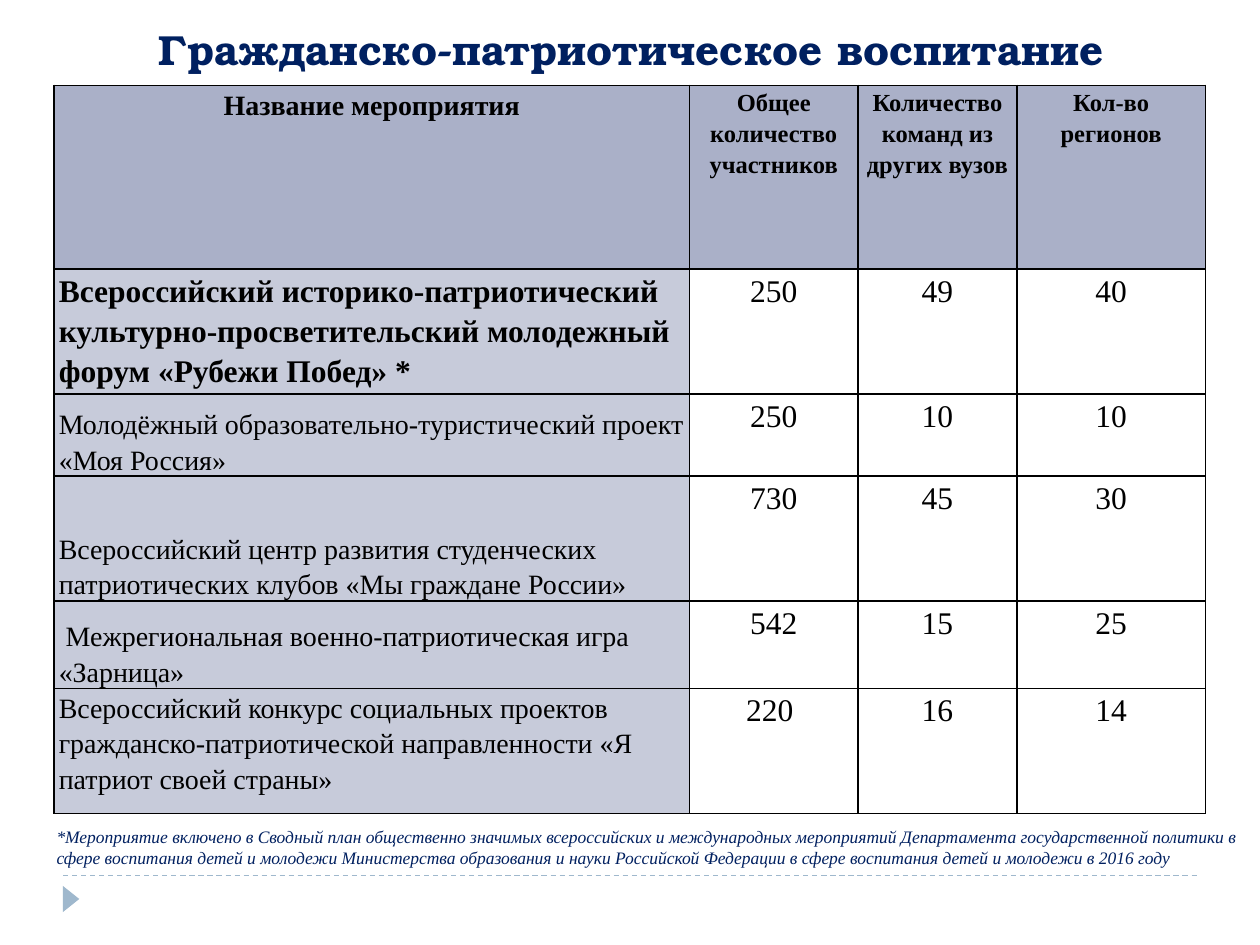
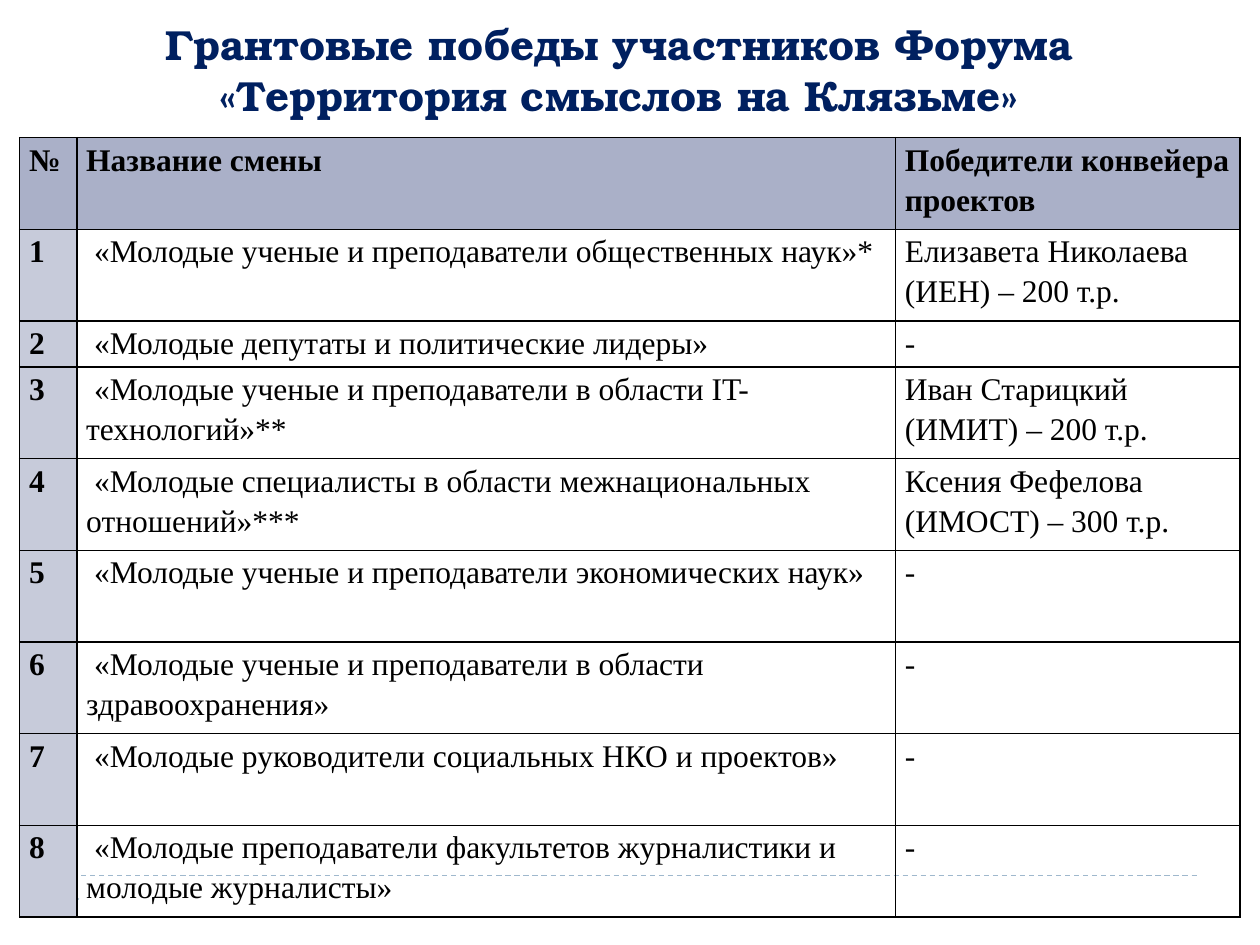
"""Builds two slides with tables of student events and grant winners."""
from dataclasses import dataclass
from typing import Optional

from lxml import etree
from pptx import Presentation
from pptx import util as u
from pptx.dml.color import RGBColor
from pptx.enum import dml, shapes, text
from pptx.oxml import ns

NAVY = RGBColor(0x00, 0x20, 0x60)
BLACK = RGBColor(0x00, 0x00, 0x00)
MIST = RGBColor(0x9F, 0xB8, 0xCD)
HEADER = RGBColor(0xAA, 0xB0, 0xC8)
LABEL = RGBColor(0xC7, 0xCB, 0xDA)

TITLE_FONT = "TeX Gyre Bonum"
BODY_FONT = "Times New Roman"
CENTER = text.PP_ALIGN.CENTER
LEFT = text.PP_ALIGN.LEFT
TOP = text.MSO_ANCHOR.TOP
BOTTOM = text.MSO_ANCHOR.BOTTOM


@dataclass
class Cell:
    text: str
    size: int = 18
    bold: bool = False
    align: text.PP_ALIGN = LEFT
    anchor: text.MSO_ANCHOR = TOP
    fill: Optional[RGBColor] = None


@dataclass
class Grid:
    left: float
    top: float
    widths: list[float]
    heights: list[float]
    side_inset: float
    rows: list[list[Cell]]


@dataclass
class Title:
    text: str
    left: float
    height: float


def event_row(name: str, counts: list[str], size: int = 16,
              bold: bool = False, anchor: text.MSO_ANCHOR = BOTTOM) -> list[Cell]:
    label = Cell(name, size, bold, anchor=anchor, fill=LABEL)
    return [label] + [Cell(count, align=CENTER) for count in counts]


def session_row(number: int, name: str, winner: str) -> list[Cell]:
    return [Cell(str(number), bold=True, fill=LABEL), Cell(f" «{name}"), Cell(winner)]


EVENTS = Grid(
    30.9, 48.8, [363.1, 96.3, 90.8, 107.8], [104.9, 71.4, 47, 71.4, 50, 71.6], 2.7,
    [
        [Cell("Название мероприятия", 16, True, CENTER, fill=HEADER)]
        + [Cell(name, 14, True, CENTER, fill=HEADER) for name in (
            "Общее количество участников",
            "Количество команд из других вузов",
            "Кол-во регионов")],
        event_row("Всероссийский историко-патриотический культурно-просветительский "
                  "молодежный форум «Рубежи Побед» *", ["250", "49", "40"], 18, True, TOP),
        event_row("Молодёжный образовательно-туристический проект «Моя Россия»",
                  ["250", "10", "10"]),
        event_row("Всероссийский центр развития студенческих патриотических клубов "
                  "«Мы граждане России» ", ["730", "45", "30"]),
        event_row(" Межрегиональная военно-патриотическая игра «Зарница»",
                  ["542", "15", "25"]),
        event_row("Всероссийский конкурс социальных проектов гражданско-патриотической "
                  "направленности «Я патриот своей страны»", ["220 ", "16", "14"], anchor=TOP),
    ],
)

SESSIONS = [
    ("Молодые ученые и преподаватели общественных наук»*",
     "Елизавета Николаева (ИЕН) – 200 т.р."),
    ("Молодые депутаты и политические лидеры»", "-"),
    ("Молодые ученые и преподаватели в области IT-технологий»**",
     "Иван Старицкий (ИМИТ) – 200 т.р."),
    ("Молодые специалисты в области межнациональных отношений»***",
     "Ксения Фефелова (ИМОСТ) – 300 т.р."),
    ("Молодые ученые и преподаватели экономических наук»", "-"),
    ("Молодые ученые и преподаватели в области здравоохранения»", "-"),
    ("Молодые руководители социальных НКО и проектов»", "-"),
    ("Молодые преподаватели факультетов журналистики и молодые журналисты»", "-"),
]

GRANTS = Grid(
    11.2, 78.7, [32.7, 467.8, 196.8], [52.4, 52.4, 26.3] + [52.4] * 6, 5.4,
    [[Cell(name, bold=True, fill=HEADER)
      for name in ("№", "Название смены", "Победители конвейера проектов")]]
    + [session_row(number, *session) for number, session in enumerate(SESSIONS, 1)],
)

FOOTNOTE = (
    "*Мероприятие включено в Сводный план общественно значимых всероссийских и "
    "международных мероприятий Департамента государственной политики в сфере воспитания "
    "детей и молодежи Министерства образования и науки Российской Федерации в сфере "
    "воспитания детей и молодежи в 2016 году"
)


def set_font(para, name: str, size: float, color: RGBColor,
             bold: bool = False, italic: bool = False) -> None:
    font = para.font
    font.name, font.size, font.bold, font.italic = name, u.Pt(size), bold, italic
    font.color.rgb = color


def add_title(page, title: Title) -> None:
    box = page.shapes.title
    box.left, box.top = u.Pt(title.left), u.Pt(9.4)
    box.width, box.height = u.Pt(648), u.Pt(title.height)
    frame = box.text_frame
    frame.auto_size = text.MSO_AUTO_SIZE.NONE
    frame.vertical_anchor = BOTTOM
    para = frame.paragraphs[0]
    para.text = title.text
    para.alignment = CENTER
    set_font(para, TITLE_FONT, 24, NAVY, bold=True)


def add_footer_marks(page) -> None:
    rule = page.shapes.add_connector(
        shapes.MSO_CONNECTOR.STRAIGHT, u.Pt(36), u.Pt(500.4), u.Pt(684), u.Pt(500.4))
    rule.line.color.rgb = MIST
    rule.line.width = u.Pt(0.75)
    rule.line.dash_style = dml.MSO_LINE.DASH
    etree.SubElement(rule._element.spPr, ns.qn("a:effectLst"))
    marker = page.shapes.add_shape(
        shapes.MSO_SHAPE.ISOSCELES_TRIANGLE, u.Pt(33.1), u.Pt(509), u.Pt(15), u.Pt(9.4))
    marker.rotation = 90
    marker.shadow.inherit = False
    marker.fill.solid()
    marker.fill.fore_color.rgb = MIST
    marker.line.fill.background()


def add_borders(cell) -> None:
    properties = cell._tc.get_or_add_tcPr()
    for index, side in enumerate(("lnL", "lnR", "lnT", "lnB")):
        line = etree.Element(ns.qn(f"a:{side}"), w=str(u.Pt(1)))
        solid = etree.SubElement(line, ns.qn("a:solidFill"))
        etree.SubElement(solid, ns.qn("a:srgbClr"), val=str(BLACK))
        properties.insert(index, line)


def fill_cell(target, cell: Cell, side_inset: float) -> None:
    target.margin_left = target.margin_right = u.Pt(side_inset)
    target.margin_top = target.margin_bottom = u.Pt(0)
    target.vertical_anchor = cell.anchor
    if cell.fill is None:
        target.fill.background()
    else:
        target.fill.solid()
        target.fill.fore_color.rgb = cell.fill
    add_borders(target)
    para = target.text_frame.paragraphs[0]
    para.text = cell.text
    para.alignment = cell.align
    para.line_spacing = 1.15
    set_font(para, BODY_FONT, cell.size, BLACK, cell.bold)


def add_grid(page, grid: Grid) -> None:
    table = page.shapes.add_table(
        len(grid.heights), len(grid.widths), u.Pt(grid.left), u.Pt(grid.top),
        u.Pt(sum(grid.widths)), u.Pt(sum(grid.heights))).table
    table.horz_banding = False
    for column, width in zip(table.columns, grid.widths):
        column.width = u.Pt(width)
    for row, height, cells in zip(table.rows, grid.heights, grid.rows):
        row.height = u.Pt(height)
        for target, cell in zip(row.cells, cells):
            fill_cell(target, cell, grid.side_inset)


def add_footnote(page) -> None:
    box = page.shapes.add_textbox(u.Pt(25.2), u.Pt(468.7), u.Pt(694.8), u.Pt(31.7))
    box.text_frame.word_wrap = True
    para = box.text_frame.paragraphs[0]
    para.text = FOOTNOTE
    set_font(para, BODY_FONT, 10, NAVY, italic=True)


def add_page(deck, title: Title, grid: Grid):
    page = deck.slides.add_slide(deck.slide_layouts.get_by_name("Title Only"))
    add_title(page, title)
    add_footer_marks(page)
    add_grid(page, grid)
    return page


def main() -> None:
    deck = Presentation()
    deck.slide_width, deck.slide_height = u.Pt(720), u.Pt(540)
    events = add_page(deck, Title("Гражданско-патриотическое воспитание", 36.7, 36.7), EVENTS)
    add_footnote(events)
    add_page(deck, Title("Грантовые победы участников Форума \v"
                         "«Территория смыслов на Клязьме» ", 33.8, 62.6), GRANTS)
    deck.save("out.pptx")


if __name__ == "__main__":
    main()
